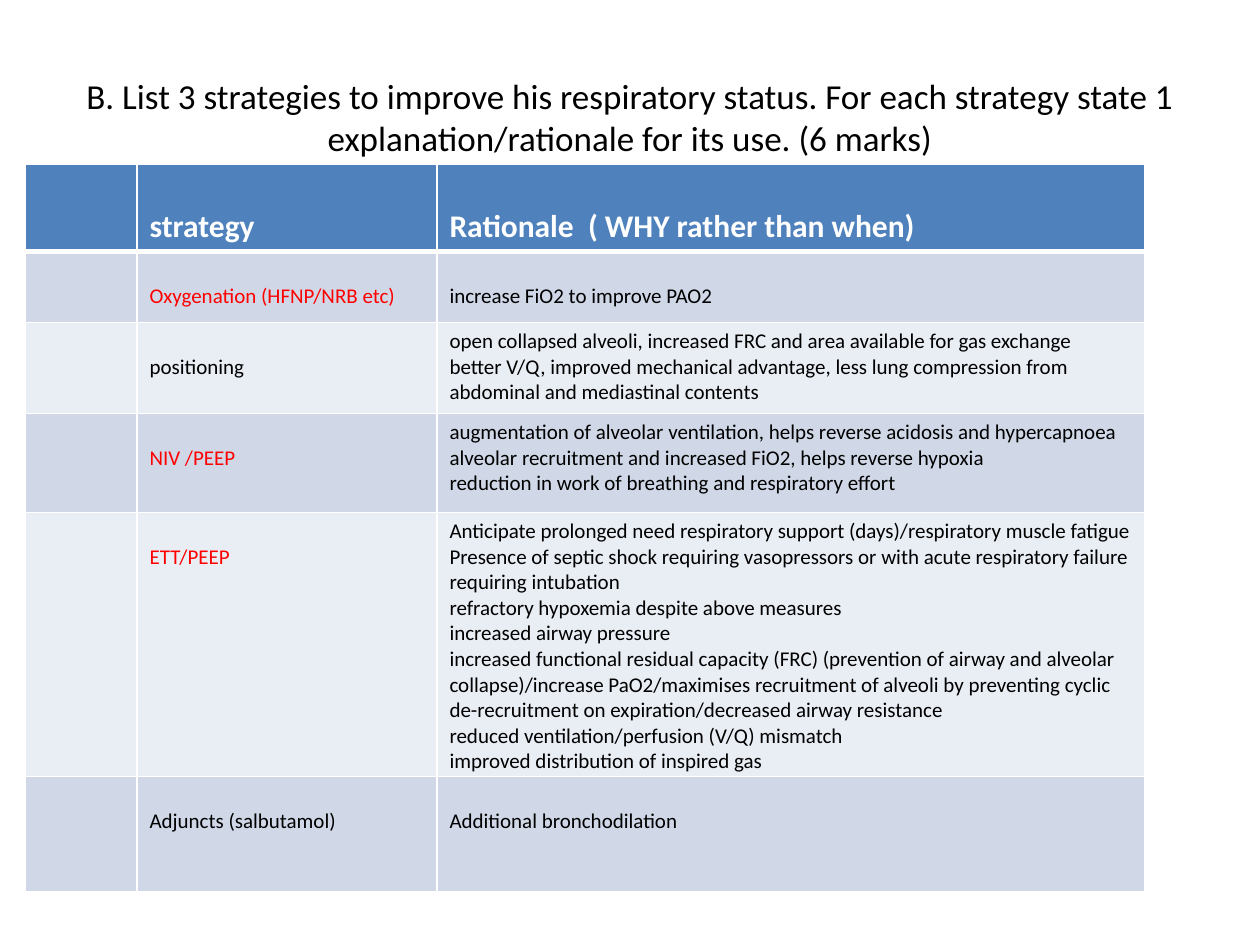
"""Build a slide with a table of respiratory strategies and their rationale."""
import lxml.etree
import pptx
import pptx.dml.color
import pptx.enum.text
import pptx.oxml.ns
import pptx.util

TITLE = (
    "B. List 3 strategies to improve his respiratory status. "
    "For each strategy state 1 explanation/rationale for its use. (6 marks)"
)
HEADINGS = ["", "strategy", "Rationale  ( WHY rather than when)"]
STRATEGIES = [
    {"name": "Oxygenation (HFNP/NRB etc)", "color": "red", "height": 71, "lowered": True,
     "rationale": ["increase FiO2 to improve PAO2"]},
    {"name": "positioning", "color": "black", "height": 91, "lowered": False,
     "rationale": [
         "open collapsed alveoli, increased FRC and area available for gas exchange",
         "better V/Q, improved mechanical advantage, less lung compression from "
         "abdominal and mediastinal contents",
     ]},
    {"name": "NIV /PEEP", "color": "red", "height": 99, "lowered": False,
     "rationale": [
         "augmentation of alveolar ventilation, helps reverse acidosis and hypercapnoea",
         "alveolar recruitment and increased FiO2, helps reverse hypoxia",
         "reduction in work of breathing and respiratory effort",
     ]},
    {"name": "ETT/PEEP", "color": "red", "height": 257, "lowered": False,
     "rationale": [
         "Anticipate prolonged need respiratory support (days)/respiratory muscle fatigue",
         "Presence of septic shock requiring vasopressors or with acute respiratory "
         "failure requiring intubation",
         "refractory hypoxemia despite above measures",
         "increased airway pressure",
         "increased functional residual capacity (FRC) (prevention of airway and alveolar "
         "collapse)/increase PaO2/maximises recruitment of alveoli by preventing cyclic "
         "de-recruitment on expiration/decreased airway resistance",
         "reduced ventilation/perfusion (V/Q) mismatch",
         "improved distribution of inspired gas",
     ]},
    {"name": "Adjuncts (salbutamol)", "color": "black", "height": 115, "lowered": True,
     "rationale": ["Additional bronchodilation"]},
]
COLORS = {
    "black": "000000", "white": "FFFFFF", "red": "FF0000",
    "header": "4F81BD", "band": "D0D8E8", "plain": "E9EDF4",
}
FONT = "Calibri"
COLUMN_WIDTHS = [112, 300, 708]
HEADER_HEIGHT = 86
INSET = 6
HEADER_DROP, BODY_DROP = 38, 26


def px(length):
    return pptx.util.Emu(round(length * 914400 / 126))


def rgb(name):
    return pptx.dml.color.RGBColor.from_string(COLORS[name])


def write_text(frame, lines, size=12, color="black", bold=False, align="LEFT"):
    frame.word_wrap = True
    for index, line in enumerate(lines):
        paragraph = frame.paragraphs[0] if index == 0 else frame.add_paragraph()
        paragraph.alignment = getattr(pptx.enum.text.PP_ALIGN, align)
        run = paragraph.add_run()
        run.text = line
        run.font.name = FONT
        run.font.size = pptx.util.Pt(size)
        run.font.bold = bold
        run.font.color.rgb = rgb(color)


def style_cell(cell, fill, drop=0, top=1, bottom=1):
    cell.margin_top = px(INSET + drop)
    cell.margin_bottom = px(INSET)
    properties = cell._tc.get_or_add_tcPr()
    for side, width in (("lnL", 1), ("lnR", 1), ("lnT", top), ("lnB", bottom)):
        line = lxml.etree.SubElement(
            properties, pptx.oxml.ns.qn(f"a:{side}"), w=str(pptx.util.Pt(width)))
        solid = lxml.etree.SubElement(line, pptx.oxml.ns.qn("a:solidFill"))
        lxml.etree.SubElement(solid, pptx.oxml.ns.qn("a:srgbClr"), val=COLORS["white"])
    cell.fill.solid()
    cell.fill.fore_color.rgb = rgb(fill)


def add_title(slide):
    shape = slide.shapes.add_textbox(px(63), px(38), px(1134), px(157))
    shape.text_frame.vertical_anchor = pptx.enum.text.MSO_ANCHOR.MIDDLE
    write_text(shape.text_frame, [TITLE], size=20, align="CENTER")


def add_strategy_table(slide):
    heights = [HEADER_HEIGHT] + [strategy["height"] for strategy in STRATEGIES]
    table = slide.shapes.add_table(
        len(heights), len(COLUMN_WIDTHS), px(25), px(164),
        px(sum(COLUMN_WIDTHS)), px(sum(heights))).table
    table.horz_banding = False
    for column, width in zip(table.columns, COLUMN_WIDTHS):
        column.width = px(width)
    for row, height in zip(table.rows, heights):
        row.height = px(height)

    for index, heading in enumerate(HEADINGS):
        cell = table.cell(0, index)
        style_cell(cell, "header", drop=HEADER_DROP if heading else 0, bottom=3)
        if heading:
            write_text(cell.text_frame, [heading], size=18, color="white", bold=True)

    for number, strategy in enumerate(STRATEGIES, start=1):
        fill = "band" if number % 2 else "plain"
        top = 3 if number == 1 else 1
        drops = [0, BODY_DROP, BODY_DROP if strategy["lowered"] else 0]
        cells = [table.cell(number, index) for index in range(len(COLUMN_WIDTHS))]
        for cell, drop in zip(cells, drops):
            style_cell(cell, fill, drop=drop, top=top)
        write_text(cells[1].text_frame, [strategy["name"]], color=strategy["color"])
        write_text(cells[2].text_frame, strategy["rationale"])


def main():
    presentation = pptx.Presentation()
    presentation.slide_width = px(1260)
    presentation.slide_height = px(945)
    slide = presentation.slides.add_slide(presentation.slide_layouts[6])
    add_title(slide)
    add_strategy_table(slide)
    presentation.save("out.pptx")


if __name__ == "__main__":
    main()
